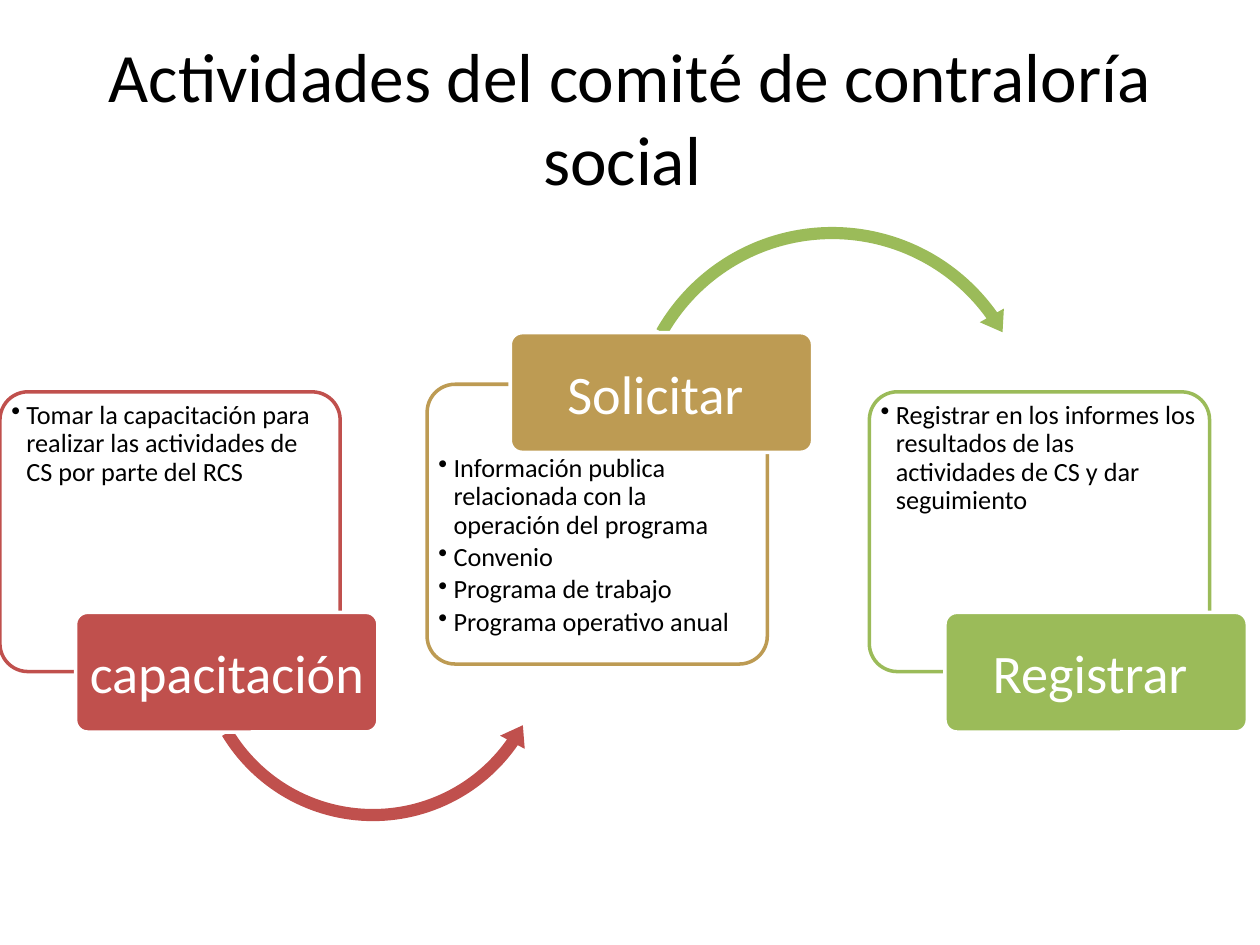
from lxml.etree import SubElement
from pptx import Presentation
from pptx.dml.color import RGBColor
from pptx.enum.shapes import MSO_SHAPE
from pptx.enum.text import MSO_ANCHOR, MSO_AUTO_SIZE, PP_ALIGN
from pptx.oxml.ns import qn
from pptx.util import Inches, Pt

THEME = {
    "font": "Calibri", "title": 39.6, "label": 31, "body": 15,
    "black": "000000", "white": "FFFFFF",
    "red": "C0504D", "gold": "BD9B53", "green": "9BBB59",
}
COLUMN = 3.45
BOX_WIDTH, BOX_HEIGHT = 2.7, 2.22
LABEL_WIDTH, LABEL_HEIGHT = 2.4, 0.95
LABEL_OFFSET = 0.6
NOTE_MARGIN = 0.06
LABEL_MARGIN = 0.03

# Arrow: preset, left, top, size, adjustments
STEPS = [
    {"label": "capacitación", "color": "red", "shift": 0,
     "box_top": 3.11, "note_top": 3.16, "label_top": 4.86,
     "notes": ["Tomar la capacitación para realizar las actividades de CS por parte del RCS"],
     "arrow": (MSO_SHAPE.LEFT_CIRCULAR_ARROW, 1.5, 3.66, 2.92,
               (0.033, 4.033, 20.917, 89.373, 0.038))},
    {"label": "Solicitar ", "color": "gold", "shift": -0.06,
     "box_top": 3.05, "note_top": 3.58, "label_top": 2.64,
     "notes": ["Información publica relacionada con la operación del programa",
               "Convenio", "Programa de trabajo", "Programa operativo anual"],
     "arrow": (MSO_SHAPE.CIRCULAR_ARROW, 4.94, 1.74, 3.33,
               (0.029, 3.5, 194.745, 125.755, 0.033))},
    {"label": "Registrar ", "color": "green", "shift": 0,
     "box_top": 3.11, "note_top": 3.16, "label_top": 4.86,
     "notes": ["Registrar en los informes los resultados de las actividades de CS y dar seguimiento"],
     "arrow": None},
]


def add_panel(shapes, preset, bounds, fill, line, adjustments):
    shape = shapes.add_shape(preset, *map(Inches, bounds))
    shape.shadow.inherit = False
    shape.fill.solid()
    shape.fill.fore_color.rgb = RGBColor.from_string(THEME[fill])
    if line:
        shape.line.color.rgb = RGBColor.from_string(THEME[line])
        shape.line.width = Pt(2)
    else:
        shape.line.fill.background()
    for index, value in enumerate(adjustments):
        shape.adjustments[index] = value
    return shape


def write(frame, lines, size, color, margins, bulleted=False):
    """Fill a frame with bulleted notes, or with one centred caption."""
    frame.word_wrap = True
    frame.auto_size = MSO_AUTO_SIZE.NONE
    frame.vertical_anchor = MSO_ANCHOR.TOP if bulleted else MSO_ANCHOR.MIDDLE
    frame.margin_left = frame.margin_right = Inches(margins[0])
    frame.margin_top = frame.margin_bottom = Inches(margins[1])
    for index, line in enumerate(lines):
        paragraph = frame.add_paragraph() if index else frame.paragraphs[0]
        if bulleted:
            paragraph.level = 1
            paragraph.line_spacing = 0.9
            paragraph.space_after = Pt(0.15 * THEME[size])
            properties = paragraph._p.get_or_add_pPr()
            properties.set("marL", str(Inches(0.12)))
            properties.set("indent", str(Inches(-0.12)))
            SubElement(properties, qn("a:buChar")).set("char", "•")
        else:
            paragraph.alignment = PP_ALIGN.CENTER
        run = paragraph.add_run()
        run.text = line
        run.font.name = THEME["font"]
        run.font.size = Pt(THEME[size])
        run.font.color.rgb = RGBColor.from_string(THEME[color])


presentation = Presentation()
presentation.slide_width, presentation.slide_height = Inches(10), Inches(7.5)
slide = presentation.slides.add_slide(presentation.slide_layouts[5])

title = slide.shapes.title
title.left, title.top, title.width, title.height = map(Inches, (0.5, 0.3, 9, 1.25))
write(title.text_frame, ["Actividades del comité de contraloría social "],
      "title", "black", (0.1, 0.05))

diagram = slide.shapes.add_group_shape().shapes
for number, step in enumerate(STEPS):
    column_left = number * COLUMN
    box_left = column_left + step["shift"]
    box = add_panel(diagram, MSO_SHAPE.ROUNDED_RECTANGLE,
                    (box_left, step["box_top"], BOX_WIDTH, BOX_HEIGHT),
                    "white", step["color"], [0.1])
    fill_color = box.fill._xPr.find(qn("a:solidFill"))[0]
    SubElement(fill_color, qn("a:alpha")).set("val", "90000")

    notes = diagram.add_textbox(*map(Inches, (
        box_left + NOTE_MARGIN, step["note_top"], BOX_WIDTH - 2 * NOTE_MARGIN, 1.65)))
    write(notes.text_frame, step["notes"], "body", "black", (0.03, 0.03), bulleted=True)

    if step["arrow"]:
        preset, left, top, size, adjustments = step["arrow"]
        add_panel(diagram, preset, (left, top, size, size), step["color"] if number == 0
                  else STEPS[number + 1]["color"], None, adjustments)

    label_left = column_left + LABEL_OFFSET
    add_panel(diagram, MSO_SHAPE.ROUNDED_RECTANGLE,
              (label_left, step["label_top"], LABEL_WIDTH, LABEL_HEIGHT),
              step["color"], "white", [0.1])
    label = diagram.add_textbox(*map(Inches, (
        label_left + LABEL_MARGIN, step["label_top"] + LABEL_MARGIN,
        LABEL_WIDTH - 2 * LABEL_MARGIN, LABEL_HEIGHT - 2 * LABEL_MARGIN)))
    write(label.text_frame, [step["label"]], "label", "white", (0.06, 0.04))

presentation.save("out.pptx")
